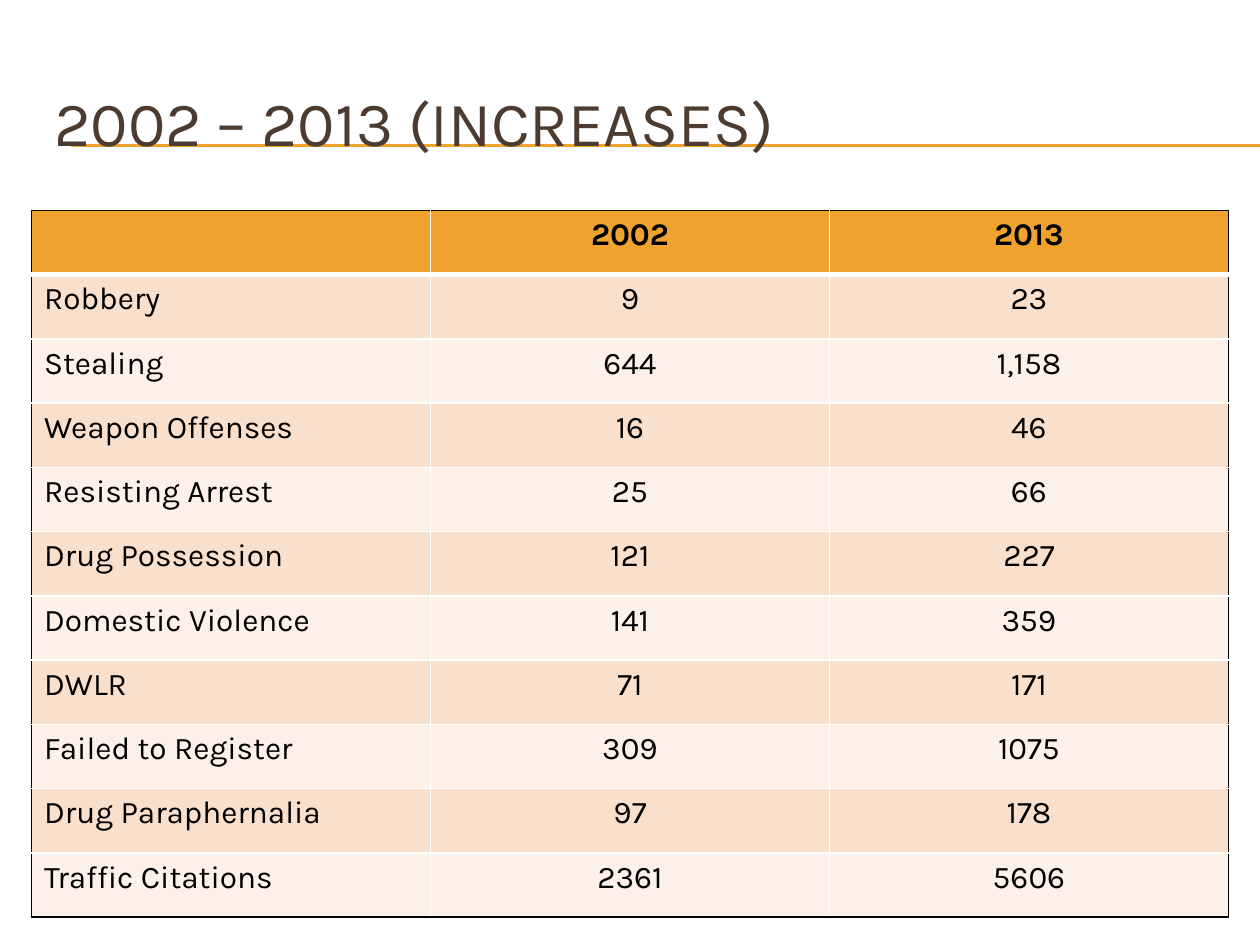
from lxml import etree
from pptx import Presentation, util as u
from pptx.dml.color import RGBColor
from pptx.enum import shapes, text
from pptx.oxml.ns import qn

TITLE = "2002 – 2013 (INCREASES)"
HEADER = ("", "2002", "2013")
OFFENSES = [
    ("Robbery", "9", "23"),
    ("Stealing", "644", "1,158"),
    ("Weapon Offenses", "16", "46"),
    ("Resisting Arrest", "25", "66"),
    ("Drug Possession", "121", "227"),
    ("Domestic Violence", "141", "359"),
    ("DWLR", "71", "171"),
    ("Failed to Register", "309", "1075"),
    ("Drug Paraphernalia", "97", "178"),
    ("Traffic Citations", "2361", "5606"),
]
ROWS = [HEADER, *OFFENSES]

FONT = "Karla"
BLACK = RGBColor(0x00, 0x00, 0x00)
WHITE = RGBColor(0xFF, 0xFF, 0xFF)
BROWN = RGBColor(0x4E, 0x3B, 0x30)
ORANGE = RGBColor(0xF0, 0xA2, 0x2E)
BANDS = (RGBColor(0xFC, 0xF0, 0xE8), RGBColor(0xF9, 0xE0, 0xCD))

WIDTH, HEIGHT = u.Inches(10), u.Inches(7.5)
MARGIN = u.Inches(0.25)
TABLE_TOP, TABLE_HEIGHT = u.Inches(1.67), u.Inches(5.61)
RULE_LEFT = u.Inches(0.56)
RULE_TOPS = (u.Inches(1.15), u.Inches(1.16))


def write(frame, content, size=18, color=BLACK, bold=False, align=text.PP_ALIGN.LEFT):
    paragraph = frame.paragraphs[0]
    paragraph.alignment = align
    run = paragraph.add_run()
    run.text = content
    run.font.name = FONT
    run.font.size = u.Pt(size)
    run.font.bold = bold
    run.font.color.rgb = color


def add_rule(slide, top):
    rule = slide.shapes.add_connector(
        shapes.MSO_CONNECTOR.STRAIGHT, RULE_LEFT, top, WIDTH, top)
    rule.line.color.rgb = ORANGE
    rule.line.width = u.Pt(0.75)
    etree.SubElement(rule.element.spPr, qn("a:effectLst"))
    return rule


def set_border(cell, side, color, points):
    """Draw one cell edge; side is L, R, T or B."""
    properties = cell._tc.get_or_add_tcPr()
    line = etree.SubElement(properties, qn(f"a:ln{side}"), w=str(u.Pt(points)))
    fill = etree.SubElement(line, qn("a:solidFill"))
    etree.SubElement(fill, qn("a:srgbClr"), val=str(color))


def format_cell(cell, row, column):
    """Black outer frame, white inner grid, thick white line under the header."""
    last_row, last_column = len(ROWS) - 1, len(HEADER) - 1
    outer = {"L": column == 0, "R": column == last_column,
             "T": row == 0, "B": row == last_row}
    for side, is_outer in outer.items():
        under_header = (row, side) in ((0, "B"), (1, "T"))
        set_border(cell, side, BLACK if is_outer else WHITE, 3 if under_header else 1)
    cell.fill.solid()
    cell.fill.fore_color.rgb = ORANGE if row == 0 else BANDS[row % 2]


def add_offense_table(slide):
    table = slide.shapes.add_table(
        len(ROWS), len(HEADER), MARGIN, TABLE_TOP,
        WIDTH - 2 * MARGIN, TABLE_HEIGHT).table
    for row, values in enumerate(ROWS):
        for column, value in enumerate(values):
            cell = table.cell(row, column)
            format_cell(cell, row, column)
            if value:
                align = text.PP_ALIGN.CENTER if column else text.PP_ALIGN.LEFT
                write(cell.text_frame, value, bold=row == 0, align=align)


def main():
    presentation = Presentation()
    presentation.slide_width, presentation.slide_height = WIDTH, HEIGHT
    slide = presentation.slides.add_slide(presentation.slide_layouts[5])

    title = slide.shapes.title
    title.left, title.top = u.Inches(0.33), u.Inches(0.5)
    title.width, title.height = u.Inches(9.5), u.Inches(0.92)
    title.text_frame.vertical_anchor = text.MSO_ANCHOR.MIDDLE
    write(title.text_frame, TITLE, size=36, color=BROWN)

    for top in RULE_TOPS:
        title.element.addprevious(add_rule(slide, top).element)
    add_offense_table(slide)
    presentation.save("out.pptx")


if __name__ == "__main__":
    main()
